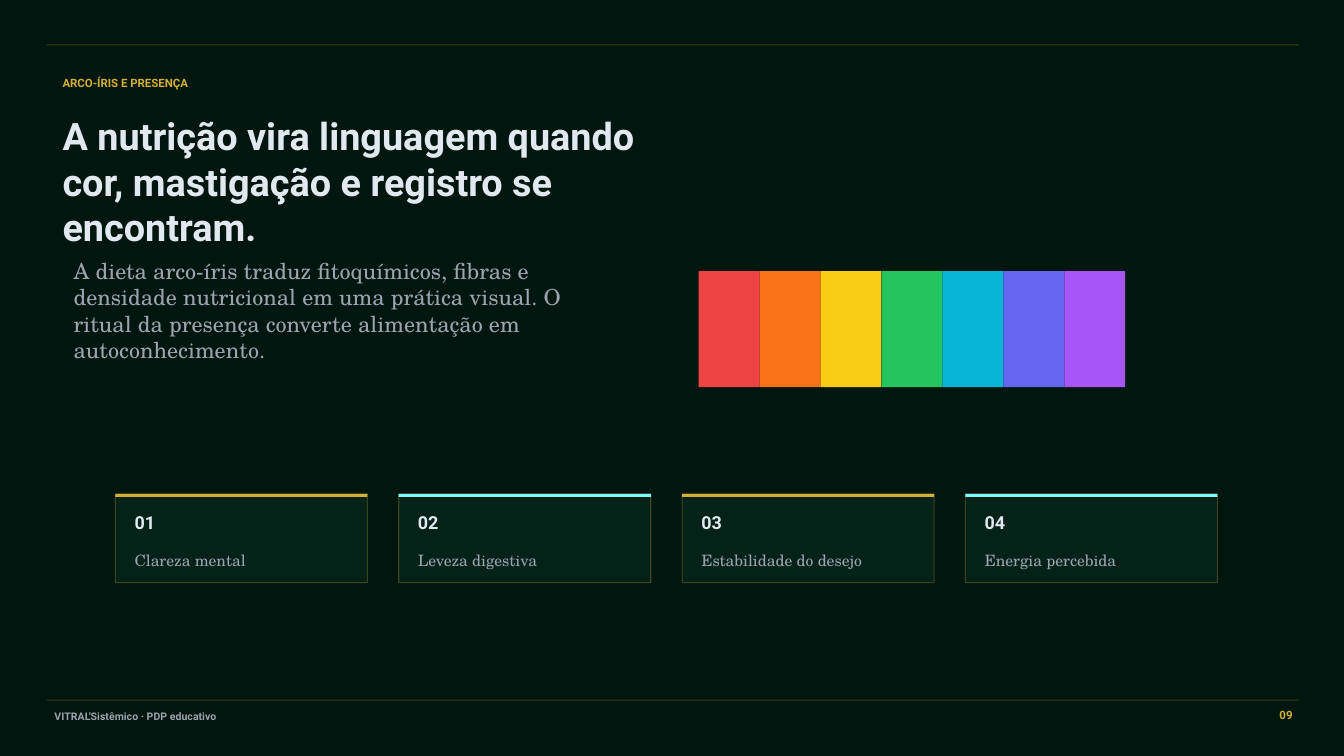
from lxml import etree
from pptx import Presentation
from pptx.dml import color as dml
from pptx.enum import shapes, text
from pptx.oxml import ns
from pptx.util import Inches, Pt

SANS, SERIF = "Roboto", "TeX Gyre Schola"
NIGHT, PANEL, GOLD, CYAN = "01160F", "08291F", "D4AF37", "7FFCFF"
LIGHT, GREY = "E2E8F0", "9CA3AF"
RAINBOW = ["EF4444", "F97316", "FACC15", "22C55E", "06B6D4", "6366F1", "A855F7"]
BENEFITS = ["Clareza mental", "Leveza digestiva", "Estabilidade do desejo", "Energia percebida"]


def paint(fill, colour, opacity=100):
    """Make a fill solid in a hex colour, with an opacity in percent."""
    fill.solid()
    fill.fore_color.rgb = dml.RGBColor.from_string(colour)
    if opacity < 100:
        for tag in fill._xPr.iter(ns.qn("a:srgbClr")):
            etree.SubElement(tag, ns.qn("a:alpha"), val=str(opacity * 1000))


def add_block(page, left, top, width, height, colour, opacity=100):
    """Add a rectangle without outline or shadow."""
    block = page.shapes.add_shape(
        shapes.MSO_SHAPE.RECTANGLE, Inches(left), Inches(top), Inches(width), Inches(height))
    block.shadow.inherit = False
    paint(block.fill, colour, opacity)
    block.line.fill.background()
    return block


def write(box, words, size, font, colour, bold=False, align=text.PP_ALIGN.LEFT):
    """Put one formatted paragraph in a box without margins."""
    frame = box.text_frame
    frame.text = words
    frame.word_wrap = True
    frame.auto_size = text.MSO_AUTO_SIZE.NONE
    frame.vertical_anchor = text.MSO_ANCHOR.TOP
    frame.margin_left = frame.margin_top = frame.margin_right = frame.margin_bottom = 0
    para = frame.paragraphs[0]
    para.alignment = align
    para.font.size, para.font.name, para.font.bold = Pt(size), font, bold
    para.font.color.rgb = dml.RGBColor.from_string(colour)
    return para


def add_label(page, left, top, width, height, words, *style, **options):
    """Add a text box holding one formatted paragraph."""
    box = page.shapes.add_textbox(Inches(left), Inches(top), Inches(width), Inches(height))
    write(box, words, *style, **options)


def fill_placeholder(box, left, top, width, height, words, *style, **options):
    """Move a template placeholder and write plain, unbulleted text in it."""
    box.left, box.top = Inches(left), Inches(top)
    box.width, box.height = Inches(width), Inches(height)
    para = write(box, words, *style, **options)
    para.space_before = Pt(0)
    props = para._p.get_or_add_pPr()
    props.set("marL", "0")
    props.set("indent", "0")
    props.insert_element_before(
        props.makeelement(ns.qn("a:buNone"), {}), "a:tabLst", "a:defRPr", "a:extLst")


def add_card(page, left, number, words, accent):
    """Add a numbered benefit card with a coloured top edge."""
    top, width = 4.9, 2.5
    card = add_block(page, left, top, width, 0.88, PANEL, 67)
    card.line.width = Pt(0.75)
    paint(card.line.fill, GOLD, 27)
    add_block(page, left, top, width, 0.03, accent)
    add_label(page, left + 0.19, top + 0.18, 2.12, 0.27, f"{number:02}", 12.8, SANS, LIGHT, bold=True)
    add_label(page, left + 0.19, top + 0.56, 2.12, 0.19, words, 11.2, SERIF, GREY)


def main():
    """Build and save the slide."""
    deck = Presentation()
    deck.slide_width, deck.slide_height = Inches(13.33), Inches(7.5)
    page = deck.slides.add_slide(deck.slide_layouts[1])
    paint(page.background.fill, NIGHT)

    for rule_top in (0.44, 6.94):
        add_block(page, 0.46, rule_top, 12.42, 0.01, GOLD, 27)

    add_label(page, 0.62, 0.75, 5.42, 0.23, "ARCO-ÍRIS E PRESENÇA", 8.2, SANS, GOLD, bold=True)
    fill_placeholder(
        page.shapes.title, 0.62, 1.12, 6.15, 1.38,
        "A nutrição vira linguagem quando cor, mastigação e registro se encontram.",
        27, SANS, LIGHT, bold=True)
    fill_placeholder(
        page.placeholders[1], 0.73, 2.55, 5.42, 1.46,
        "A dieta arco-íris traduz fitoquímicos, fibras e densidade nutricional em uma prática "
        "visual. O ritual da presença converte alimentação em autoconhecimento.",
        15.8, SERIF, GREY)

    band_width = 4.23 / len(RAINBOW)
    for index, colour in enumerate(RAINBOW):
        add_block(page, 6.93 + index * band_width, 2.69, band_width, 1.15, colour)

    for index, words in enumerate(BENEFITS):
        add_card(page, 1.145 + index * 2.81, index + 1, words, (GOLD, CYAN)[index % 2])

    add_label(page, 0.54, 7.04, 5.42, 0.19, "VITRAL'Sistêmico · PDP educativo", 7.5, SANS, GREY, bold=True)
    add_label(page, 12.4, 7.02, 0.42, 0.19, "09", 8.2, SANS, GOLD, bold=True, align=text.PP_ALIGN.RIGHT)
    deck.save("out.pptx")


if __name__ == "__main__":
    main()
